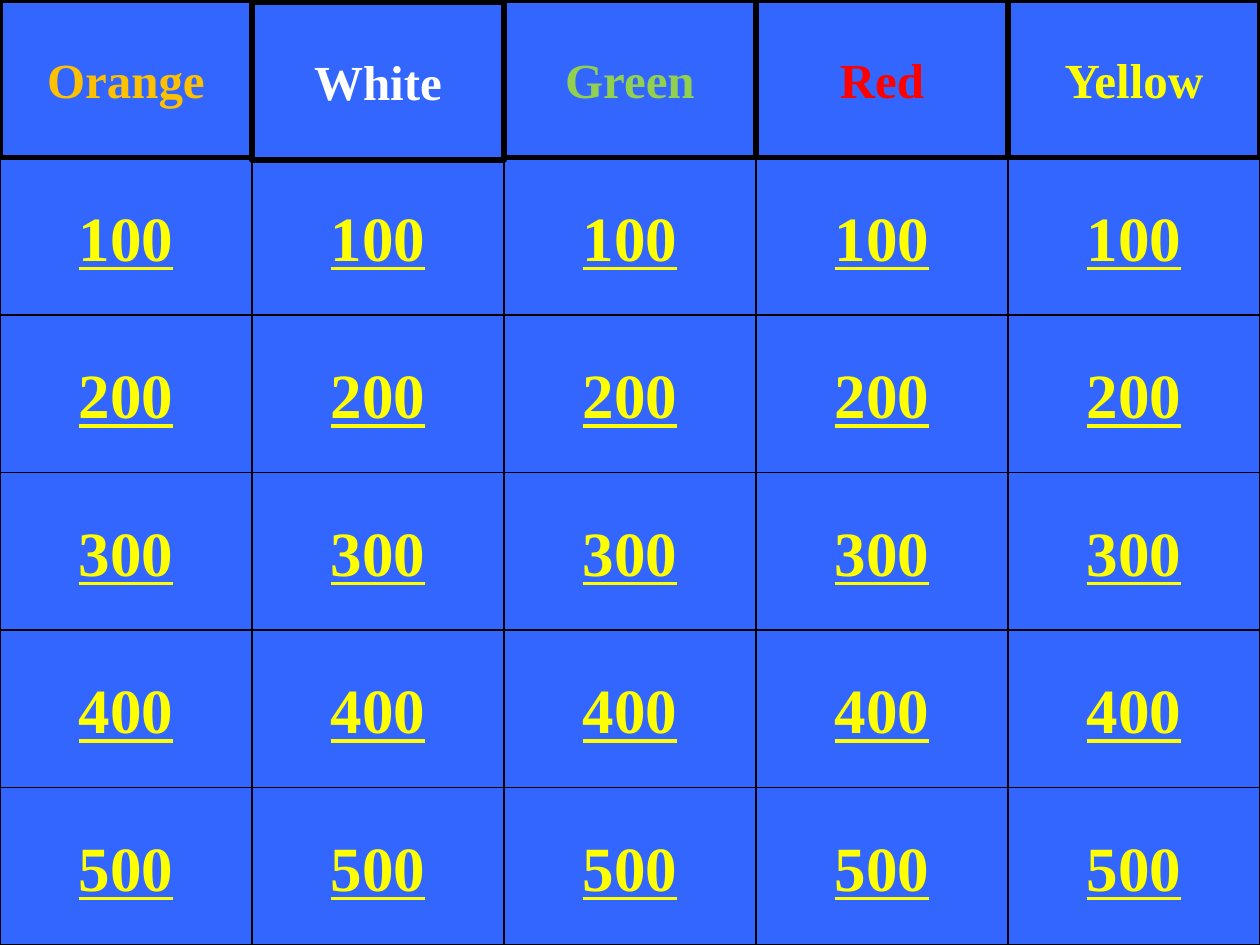
from dataclasses import dataclass

from pptx import Presentation
from pptx import util as u
from pptx.dml.color import RGBColor
from pptx.enum import shapes, text


@dataclass(frozen=True)
class Theme:
    font: str = "Times New Roman"
    back: str = "3366FF"
    edge: str = "000000"
    score: str = "FFFF00"
    head_size: int = 28
    score_size: int = 36
    head_line: float = 3
    score_line: float = 0.75


TOPICS = [("Orange", "FFC000"), ("White", "FFFFFF"), ("Green", "92D050"),
          ("Red", "FF0000"), ("Yellow", "FFFF00")]
SCORES = [100, 200, 300, 400, 500]
WHITE_DROP = 0.016  # the White heading sits slightly low, in rows


class Board:
    """Holds the theme, the slide and a grid of equal cells."""

    def __init__(self, deck, theme, cols, rows):
        self.theme = theme
        self.slide = deck.slides.add_slide(deck.slide_layouts[6])
        self.wide = deck.slide_width / cols
        self.high = deck.slide_height / rows
        self.paint(self.slide.background.fill, theme.back)

    def paint(self, fill, color):
        fill.solid()
        fill.fore_color.rgb = RGBColor.from_string(color)

    def cell(self, kind, col, row, label, color, size, line):
        """Draw one labelled grid cell and return its text run."""
        box = self.slide.shapes.add_shape(
            kind, u.Emu(round(col * self.wide)), u.Emu(round(row * self.high)),
            u.Emu(round(self.wide)), u.Emu(round(self.high)))
        box.shadow.inherit = False
        self.paint(box.fill, self.theme.back)
        self.paint(box.line.fill, self.theme.edge)
        box.line.width = u.Pt(line)
        frame = box.text_frame
        frame.text = label
        frame.word_wrap = False
        frame.vertical_anchor = text.MSO_ANCHOR.MIDDLE
        para = frame.paragraphs[0]
        para.alignment = text.PP_ALIGN.CENTER
        run = para.runs[0]
        run.font.name = self.theme.font
        run.font.size = u.Pt(size)
        run.font.bold = True
        run.font.color.rgb = RGBColor.from_string(color)
        return run

    def head(self, col, row, label, color):
        self.cell(shapes.MSO_SHAPE.RECTANGLE, col, row, label, color,
                  self.theme.head_size, self.theme.head_line)

    def score(self, col, row, value):
        run = self.cell(shapes.MSO_SHAPE.ACTION_BUTTON_CUSTOM, col, row,
                        str(value), self.theme.score,
                        self.theme.score_size, self.theme.score_line)
        run.font.underline = True


def main():
    deck = Presentation()
    deck.slide_width, deck.slide_height = u.Inches(10), u.Inches(7.5)
    board = Board(deck, Theme(), len(TOPICS), len(SCORES) + 1)
    for col in range(len(TOPICS)):
        for row, value in enumerate(SCORES, 1):
            board.score(col, row, value)
    for col, (label, color) in enumerate(TOPICS):
        board.head(col, WHITE_DROP if label == "White" else 0, label, color)
    deck.save("out.pptx")


if __name__ == "__main__":
    main()
